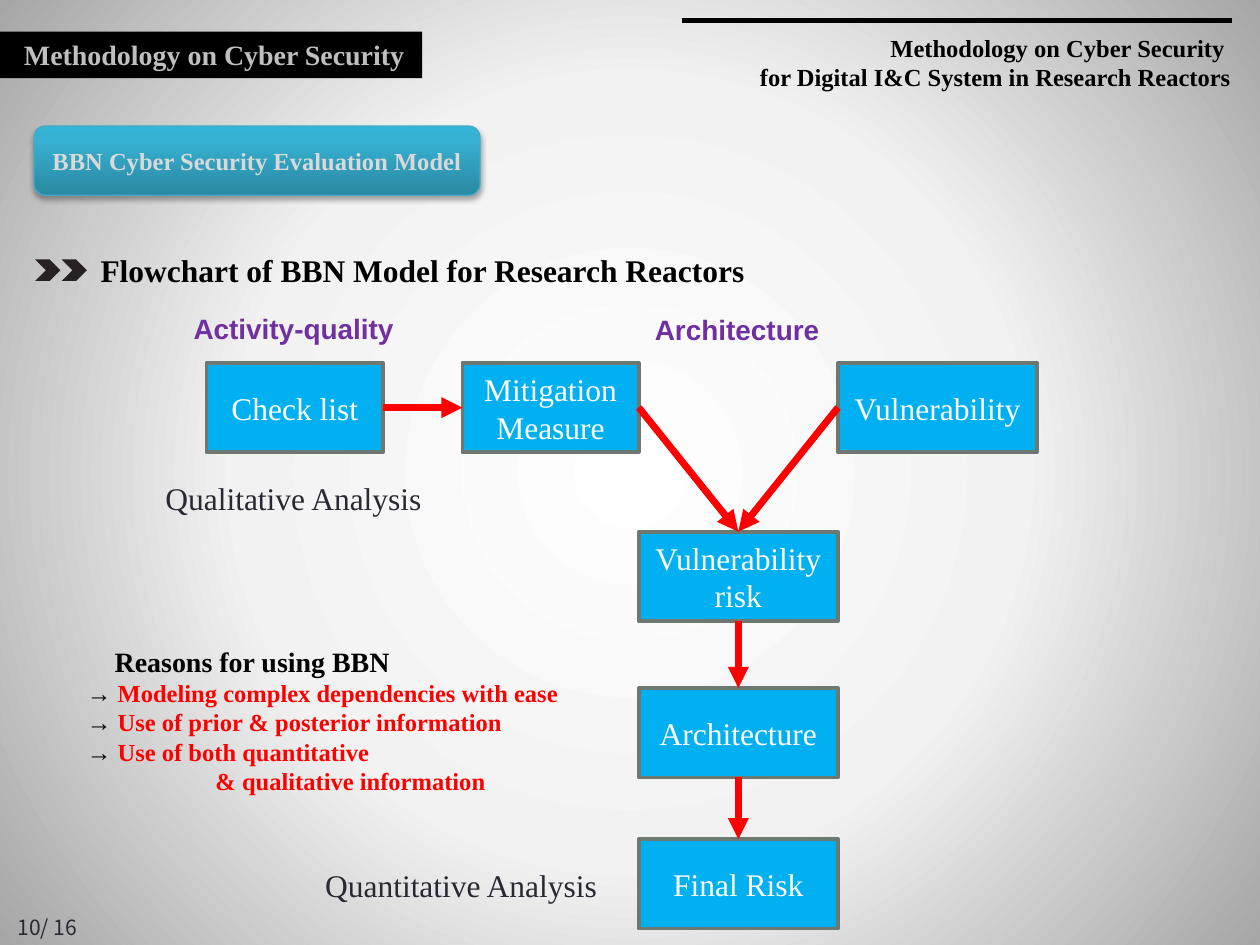
from dataclasses import dataclass

from lxml.etree import SubElement
from pptx import Presentation
from pptx.dml.color import RGBColor
from pptx.enum.shapes import MSO_CONNECTOR, MSO_SHAPE
from pptx.enum.text import MSO_ANCHOR, MSO_AUTO_SIZE, PP_ALIGN
from pptx.oxml.ns import qn
from pptx.util import Inches, Pt


@dataclass(frozen=True)
class Theme:
    serif: str = "Times New Roman"
    sans: str = "Arial"
    number_font: str = "Noto Sans CJK KR"
    black: str = "000000"
    white: str = "FFFFFF"
    ink: str = "292934"
    band_text: str = "BFBFBF"
    badge_text: str = "D9D9D9"
    badge_line: str = "46AAC5"
    chevron: str = "272123"
    box_fill: str = "00B0F0"
    box_line: str = "6D7871"
    red: str = "FF0000"
    purple: str = "7030A0"
    backdrop: tuple = ((0, "FFFFFF"), (50, "F2F2F2"), (100, "A6A6A6"))
    badge_fill: tuple = ((0, "2A88A2"), (80, "37B1D2"), (100, "34B4D6"))
    large: int = 18
    medium: int = 16
    small: int = 14
    tiny: int = 12


class SlideBuilder:
    columns = 100
    rows = 75

    def __init__(self, deck, theme):
        self.theme = theme
        self.column = deck.slide_width / self.columns
        self.row = deck.slide_height / self.rows
        self.slide = deck.slides.add_slide(deck.slide_layouts[1])
        self.shapes = self.slide.shapes

    def area(self, left, top, width, height):
        return (round(left * self.column), round(top * self.row),
                round(width * self.column), round(height * self.row))

    def move(self, shape, cells):
        shape.left, shape.top, shape.width, shape.height = self.area(*cells)

    def gradient(self, fill, parent, stops):
        fill.gradient()
        element = parent.find(".//" + qn("a:gradFill"))
        for child in list(element):
            element.remove(child)
        stop_list = SubElement(element, qn("a:gsLst"))
        for position, color in stops:
            stop = SubElement(stop_list, qn("a:gs"), pos=str(position * 1000))
            SubElement(stop, qn("a:srgbClr"), val=color)
        return element

    def backdrop(self):
        background = self.slide.background
        element = self.gradient(background.fill, self.slide.element, self.theme.backdrop)
        radial = SubElement(element, qn("a:path"), path="circle")
        SubElement(radial, qn("a:fillToRect"), l="50000", t="50000", r="50000", b="50000")

    def paint(self, shape, fill, line=None, weight=0):
        shape.fill.solid()
        shape.fill.fore_color.rgb = RGBColor.from_string(fill)
        if line:
            shape.line.color.rgb = RGBColor.from_string(line)
            shape.line.width = Pt(weight)
        else:
            shape.line.fill.background()

    def span(self, para, text, size, color, bold=False, font=None):
        span = para.add_run()
        span.text = text
        span.font.size = Pt(size)
        span.font.bold = bold
        span.font.name = font or self.theme.serif
        span.font.color.rgb = RGBColor.from_string(color)

    def paras(self, shape, lines, size, color, bold=False, font=None,
              align=PP_ALIGN.CENTER, anchor=MSO_ANCHOR.MIDDLE):
        frame = shape.text_frame
        frame.word_wrap = True
        frame.auto_size = MSO_AUTO_SIZE.NONE
        frame.vertical_anchor = anchor
        for index, line in enumerate(lines):
            para = frame.add_paragraph() if index else frame.paragraphs[0]
            para.alignment = align
            self.span(para, line, size, color, bold, font)

    def title(self, text, cells):
        box = self.shapes.title
        self.move(box, cells)
        self.paint(box, self.theme.black)
        box.text_frame.margin_left = Inches(0.19)
        self.paras(box, [text], self.theme.medium, self.theme.band_text, True,
                   align=PP_ALIGN.LEFT)

    def reasons(self, heading, items, cells):
        theme = self.theme
        body = self.slide.placeholders[1]
        self.move(body, cells)
        frame = body.text_frame
        frame.auto_size = MSO_AUTO_SIZE.NONE
        para = self.list_para(frame.paragraphs[0], 0.22)
        para.line_spacing = 1.5
        self.span(para, heading, theme.medium, theme.black, True)
        for marker, text, indent in items:
            para = self.list_para(frame.add_paragraph(), indent)
            if marker:
                self.span(para, marker, theme.small, theme.black, True)
            self.span(para, text, theme.small, theme.red, True)

    def list_para(self, para, indent):
        properties = para._p.get_or_add_pPr()
        properties.set("marL", str(Inches(indent)))
        properties.set("indent", "0")
        SubElement(properties, qn("a:buNone"))
        para.space_before = Pt(0)
        para.alignment = PP_ALIGN.LEFT
        return para

    def text(self, lines, cells, size, color, **style):
        box = self.shapes.add_textbox(*self.area(*cells))
        self.paras(box, lines, size, color, **style)

    def shape(self, kind, cells):
        shape = self.shapes.add_shape(kind, *self.area(*cells))
        shape.shadow.inherit = False
        return shape

    def chevron(self, cells):
        self.paint(self.shape(MSO_SHAPE.CHEVRON, cells), self.theme.chevron)

    def badge(self, text, cells):
        theme = self.theme
        badge = self.shape(MSO_SHAPE.ROUNDED_RECTANGLE, cells)
        self.paint(badge, theme.white, theme.badge_line, 0.75)
        properties = badge.element.spPr
        element = self.gradient(badge.fill, properties, theme.badge_fill)
        SubElement(element, qn("a:lin"), ang="16200000", scaled="0")
        shadow = SubElement(properties.find(qn("a:effectLst")), qn("a:outerShdw"),
                            blurRad=str(Pt(3.1)), dist=str(Pt(1.8)), dir="5400000",
                            rotWithShape="0")
        color = SubElement(shadow, qn("a:srgbClr"), val=theme.black)
        SubElement(color, qn("a:alpha"), val="35000")
        self.paras(badge, [text], theme.small, theme.badge_text, True)

    def node(self, text, cells):
        node = self.shape(MSO_SHAPE.RECTANGLE, cells)
        self.paint(node, self.theme.box_fill, self.theme.box_line, 2.08)
        self.paras(node, [text], self.theme.large, self.theme.white)
        return node

    def line(self, start, end, color, weight):
        line = self.shapes.add_connector(
            MSO_CONNECTOR.STRAIGHT, *self.area(*start, *end))
        line.line.color.rgb = RGBColor.from_string(color)
        line.line.width = Pt(weight)
        SubElement(line._element.spPr, qn("a:effectLst"))
        return line

    def arrow(self, source, source_site, target, target_site):
        arrow = self.line((0, 0), (0, 0), self.theme.red, 4)
        arrow.begin_connect(source, source_site)
        arrow.end_connect(target, target_site)
        outline = arrow._element.spPr.find(qn("a:ln"))
        SubElement(outline, qn("a:tailEnd"), type="triangle")


def main():
    deck = Presentation()
    deck.slide_width, deck.slide_height = Inches(10), Inches(7.5)
    theme = Theme()
    page = SlideBuilder(deck, theme)
    page.backdrop()
    page.title("Methodology on Cyber Security", (0, 2.5, 33.5, 3.7))
    page.reasons("Reasons for using BBN", [
        ("→ ", "Modeling complex dependencies with ease", 0),
        ("→ ", "Use of prior & posterior information", 0),
        ("→ ", "Use of both quantitative", 0),
        ("", "& qualitative information", 1.02),
    ], (5.9, 49.3, 44.8, 14.5))

    page.line((54.1, 1.6), (97.8, 1.6), theme.black, 3)
    page.text(["Methodology on Cyber Security ", "for Digital I&C System in Research Reactors"],
              (52.4, 2.1, 46.3, 5.7), theme.small, theme.black, bold=True, align=PP_ALIGN.RIGHT)
    page.badge("BBN Cyber Security Evaluation Model", (2.7, 10, 35.4, 5.5))
    for left in (2.8, 4.9):
        page.chevron((left, 20.6, 2, 1.7))
    page.text(["Flowchart of BBN Model for Research Reactors"], (7, 19.4, 58, 4),
              theme.large, theme.black, bold=True, align=PP_ALIGN.LEFT)

    top, height, narrow, wide, center = 28.8, 7.1, 14, 15.8, 50.7
    checklist = page.node("Check list", (16.4, top, narrow, height))
    mitigation = page.node("Mitigation Measure", (center - narrow, top, narrow, height))
    vulnerability = page.node("Vulnerability", (center + wide, top, wide, height))
    risk, architecture, final = [
        page.node(text, (center, row, wide, height))
        for text, row in (("Vulnerability risk", 42.2), ("Architecture", 54.6),
                          ("Final Risk", 66.6))]

    above, left, below, right = range(4)
    page.arrow(checklist, right, mitigation, left)
    page.arrow(mitigation, right, risk, above)
    page.arrow(vulnerability, left, risk, above)
    page.arrow(risk, below, architecture, above)
    page.arrow(architecture, below, final, above)

    for text, cells in (("Qualitative Analysis", (10.8, 37.5, 25, 4)),
                        ("Quantitative Analysis", (24, 68.2, 25.2, 4))):
        page.text([text], cells, theme.large, theme.ink)
    for text, cells in (("Activity-quality", (10.7, 24.2, 25.2, 3.7)),
                        ("Architecture", (45.9, 24.3, 25.2, 3.7))):
        page.text([text], cells, theme.medium, theme.purple, bold=True, font=theme.sans)
    page.text(["10/ 16"], (0, 72.1, 7.5, 2.9), theme.tiny, theme.ink, font=theme.number_font)
    deck.save("out.pptx")


if __name__ == "__main__":
    main()
